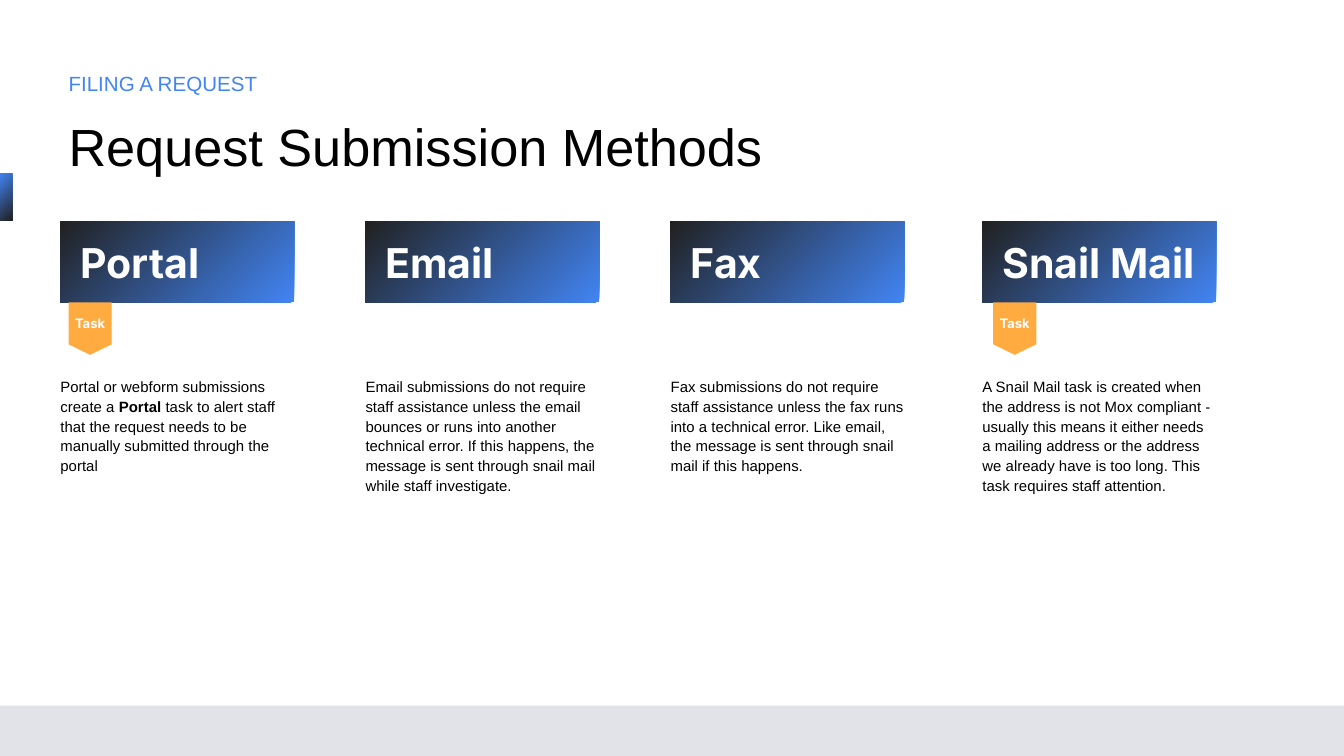
from dataclasses import dataclass

from lxml.etree import SubElement
from pptx import Presentation
from pptx.dml.color import RGBColor
from pptx.enum.shapes import MSO_SHAPE as Preset
from pptx.enum.text import MSO_ANCHOR as Anchor, PP_ALIGN as Align
from pptx.oxml.ns import qn
from pptx.shapes.autoshape import Shape
from pptx.slide import Slide
from pptx.util import Inches, Pt

COLORS = {
    "blue": "4285F4",
    "dark": "212121",
    "orange": "FFAB40",
    "footer": "D6D8DF",
    "white": "FFFFFF",
    "black": "000000",
}
SLIDE_WIDTH = 10
SLIDE_HEIGHT = SLIDE_WIDTH * 9 / 16
FOOTER_TOP = 5.25
COLUMN_WIDTH = 1.74
HEADER_TOP, HEADER_HEIGHT = 1.65, 0.6


@dataclass
class Method:
    left: float
    name: str
    description: list[str]  # every second part is bold
    task_left: float | None = None


METHODS = [
    Method(0.45, "Portal", [
        "Portal or webform submissions create a ",
        "Portal",
        " task to alert staff that the request needs to be manually submitted "
        "through the portal",
    ], task_left=0.51),
    Method(2.72, "Email", [
        "Email submissions do not require staff assistance unless the email "
        "bounces or runs into another technical error. If this happens, the "
        "message is sent through snail mail while staff investigate.",
    ]),
    Method(4.99, "Fax", [
        "Fax submissions do not require staff assistance unless the fax runs "
        "into a technical error. Like email, the message is sent through snail "
        "mail if this happens.",
    ]),
    Method(7.31, "Snail Mail", [
        "A Snail Mail task is created when the address is not Mox compliant - "
        "usually this means it either needs a mailing address or the address "
        "we already have is too long. This task requires staff attention.",
    ], task_left=7.39),
]


def rgb(name: str) -> RGBColor:
    return RGBColor.from_string(COLORS[name])


def write(shape: Shape, parts: list[str], *, size: float, color: str = "black",
          font: str = "Arial", bold: bool = False, spacing: float = 1.0,
          align: Align = Align.LEFT, anchor: Anchor = Anchor.TOP,
          left_margin: float = 0, right_margin: float = 0,
          margin_y: float = 0) -> None:
    """Fill a shape with one paragraph; every second part is bold."""
    frame = shape.text_frame
    frame.word_wrap = True
    frame.vertical_anchor = anchor
    frame.margin_left, frame.margin_right = Inches(left_margin), Inches(right_margin)
    frame.margin_top = frame.margin_bottom = Inches(margin_y)
    paragraph = frame.paragraphs[0]
    paragraph.alignment = align
    paragraph.line_spacing = spacing
    for index, part in enumerate(parts):
        run = paragraph.add_run()
        run.text = part
        run.font.name = font
        run.font.size = Pt(size)
        run.font.bold = bold or index % 2 == 1
        run.font.color.rgb = rgb(color)


def add_text(slide: Slide, left: float, top: float, width: float, height: float,
             parts: list[str], **text_format) -> None:
    box = slide.shapes.add_textbox(
        Inches(left), Inches(top), Inches(width), Inches(height))
    write(box, parts, **text_format)


def add_block(slide: Slide, left: float, top: float, width: float, height: float,
              color: str | None = None, preset: Preset = Preset.RECTANGLE) -> Shape:
    """Add a borderless shape, with the blue-to-dark gradient if no color is given."""
    block = slide.shapes.add_shape(
        preset, Inches(left), Inches(top), Inches(width), Inches(height))
    block.shadow.inherit = False
    block.line.fill.background()
    if color:
        block.fill.solid()
        block.fill.fore_color.rgb = rgb(color)
    else:
        block.fill.gradient()
        block.fill.gradient_angle = 135
        for stop, (position, name) in zip(
                block.fill.gradient_stops, [(0, "blue"), (1, "dark")]):
            stop.position = position
            stop.color.rgb = rgb(name)
    return block


def set_opacity(shape: Shape, percent: int) -> None:
    solid_color = shape.fill._xPr.find(qn("a:solidFill"))[0]
    SubElement(solid_color, qn("a:alpha")).set("val", str(percent * 1000))


def add_method(slide: Slide, method: Method) -> None:
    header = add_block(slide, method.left, HEADER_TOP, COLUMN_WIDTH, HEADER_HEIGHT)
    write(header, [method.name], size=22, color="white", font="Inter", bold=True,
          anchor=Anchor.MIDDLE, left_margin=0.15, right_margin=0.1)
    add_text(slide, method.left, 2.8, COLUMN_WIDTH, 2.1, method.description,
             size=8, spacing=1.1)
    if method.task_left is not None:
        task = add_block(slide, method.task_left, 2.25, 0.32, 0.39, "orange",
                         Preset.FLOWCHART_OFFPAGE_CONNECTOR)
        write(task, ["Task"], size=7, color="white", font="Inter", bold=True,
              align=Align.CENTER, anchor=Anchor.MIDDLE,
              left_margin=0.01, right_margin=0.01, margin_y=0.01)


def main() -> None:
    deck = Presentation()
    deck.slide_width, deck.slide_height = Inches(SLIDE_WIDTH), Inches(SLIDE_HEIGHT)
    slide = deck.slides.add_slide(deck.slide_layouts[6])

    footer = add_block(slide, 0, FOOTER_TOP, SLIDE_WIDTH,
                       SLIDE_HEIGHT - FOOTER_TOP, "footer")
    set_opacity(footer, 70)
    edge_marker = add_block(slide, 0, 1.29, 0.09, 0.35)
    edge_marker.rotation = 180

    add_text(slide, 0.51, 0.9, 6.88, 0.91, ["Request Submission Methods"],
             size=28, spacing=0.9)
    add_text(slide, 0.51, 0.51, 2.95, 0.19, ["FILING A REQUEST"],
             size=11, color="blue", spacing=1.1)
    for method in METHODS:
        add_method(slide, method)

    deck.save("out.pptx")


if __name__ == "__main__":
    main()
